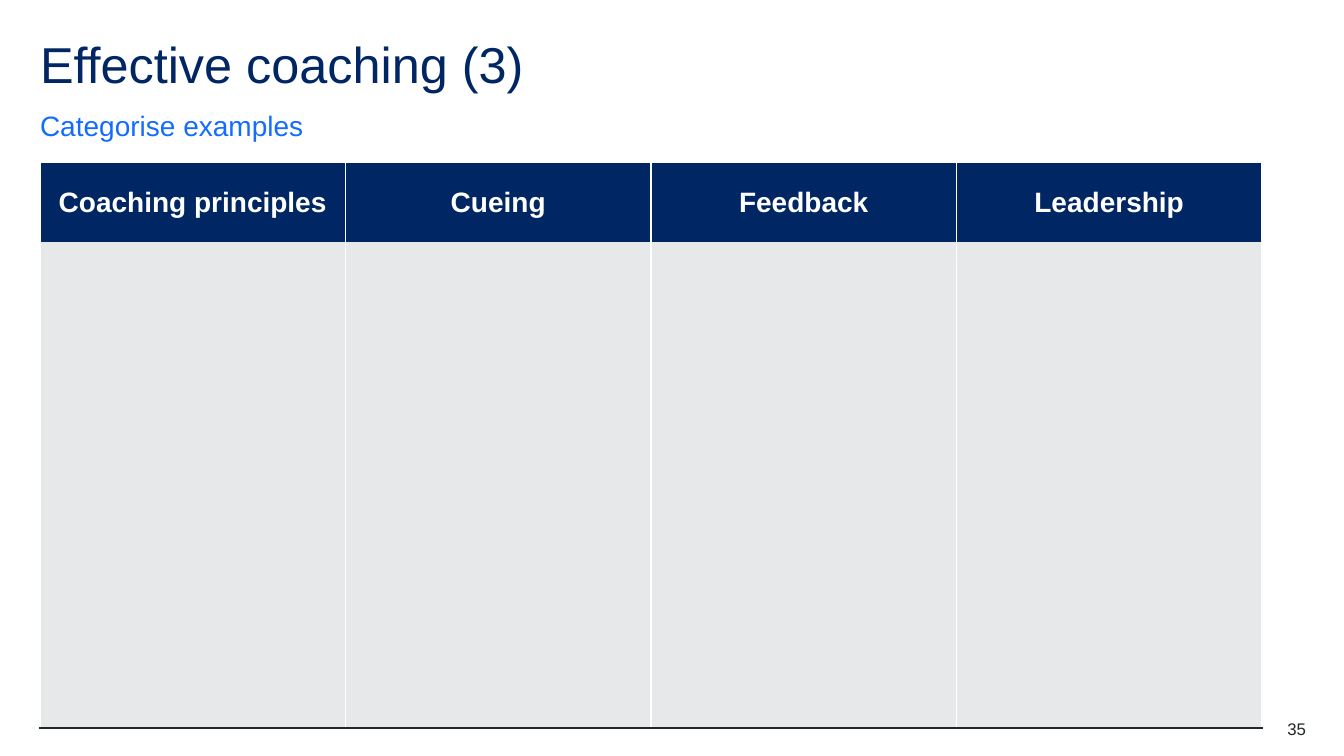
import pptx
import pptx.dml.color
import pptx.enum.text
import pptx.oxml
import pptx.oxml.ns
import pptx.util

PX = 914400 / 100.8
COLORS = {
    "navy": "002664",
    "blue": "146CFD",
    "white": "FFFFFF",
    "grey": "E7E8EA",
    "ink": "22272B",
}
HEADINGS = ["Coaching principles", "Cueing", "Feedback", "Leadership"]
ROW_HEIGHTS = [79, 486]
COLUMN_WIDTH = 3055  # tenths of a px
NO_STYLE = "{2D5ABB26-0587-4C30-8999-92F81FD0307C}"
ALIGN = pptx.enum.text.PP_ALIGN
ANCHOR = pptx.enum.text.MSO_ANCHOR


def px(length):
    return pptx.util.Emu(round(length * PX))


def write(frame, text, size, color, bold=False, align=ALIGN.LEFT,
          anchor=ANCHOR.TOP, line_spacing=1.0):
    """Fill a text frame with one formatted paragraph and no insets."""
    frame.margin_left = frame.margin_right = 0
    frame.margin_top = frame.margin_bottom = 0
    frame.word_wrap = True
    frame.auto_size = pptx.enum.text.MSO_AUTO_SIZE.NONE
    frame.vertical_anchor = anchor
    paragraph = frame.paragraphs[0]
    paragraph.alignment = align
    paragraph.line_spacing = line_spacing
    run = paragraph.add_run()
    run.text = text
    run.font.name = "Arial"
    run.font.size = pptx.util.Pt(size)
    run.font.bold = bold
    run.font.color.rgb = pptx.dml.color.RGBColor.from_string(COLORS[color])


presentation = pptx.Presentation()
presentation.slide_width = px(1344)
presentation.slide_height = px(756)
slide = presentation.slides.add_slide(presentation.slide_layouts[5])

# Title, subtitle and page number
title = slide.shapes.title
title.left, title.top, title.width, title.height = px(40), px(40), px(1266), px(60)
write(title.text_frame, "Effective coaching (3)", 36, "navy", line_spacing=0.9)

subtitle = slide.shapes.add_textbox(px(40), px(108), px(1266), px(34))
write(subtitle.text_frame, "Categorise examples", 20, "blue",
      anchor=ANCHOR.BOTTOM, line_spacing=1.5)

page_number = slide.shapes.add_textbox(px(1226), px(719), px(80), px(20))
write(page_number.text_frame, "35", 12, "ink", align=ALIGN.RIGHT)

# Table for sorting the examples
table_frame = slide.shapes.add_table(
    len(ROW_HEIGHTS), len(HEADINGS), px(40), px(163), px(1222), px(sum(ROW_HEIGHTS)))
table = table_frame.table
table.horz_banding = False
table_frame._element.find(".//" + pptx.oxml.ns.qn("a:tableStyleId")).text = NO_STYLE
for row, height in zip(table.rows, ROW_HEIGHTS):
    row.height = px(height)

for column_index, heading in enumerate(HEADINGS):
    table.columns[column_index].width = px(COLUMN_WIDTH / 10)
    for row_index, fill_color in enumerate(["navy", "grey"]):
        cell = table.cell(row_index, column_index)
        borders = {"lnL": "white", "lnR": "white"}
        if row_index == 1:
            borders["lnB"] = "ink"
        properties = cell._tc.get_or_add_tcPr()
        for side, color in borders.items():
            properties.append(pptx.oxml.parse_xml(
                f'<a:{side} {pptx.oxml.ns.nsdecls("a")} w="12700"><a:solidFill>'
                f'<a:srgbClr val="{COLORS[color]}"/></a:solidFill></a:{side}>'))
        cell.fill.solid()
        cell.fill.fore_color.rgb = pptx.dml.color.RGBColor.from_string(COLORS[fill_color])

    header = table.cell(0, column_index)
    header.vertical_anchor = ANCHOR.MIDDLE
    paragraph = header.text_frame.paragraphs[0]
    paragraph.alignment = ALIGN.CENTER
    run = paragraph.add_run()
    run.text = heading
    run.font.name = "Arial"
    run.font.size = pptx.util.Pt(20)
    run.font.bold = True
    run.font.color.rgb = pptx.dml.color.RGBColor.from_string(COLORS["white"])

presentation.save("out.pptx")
